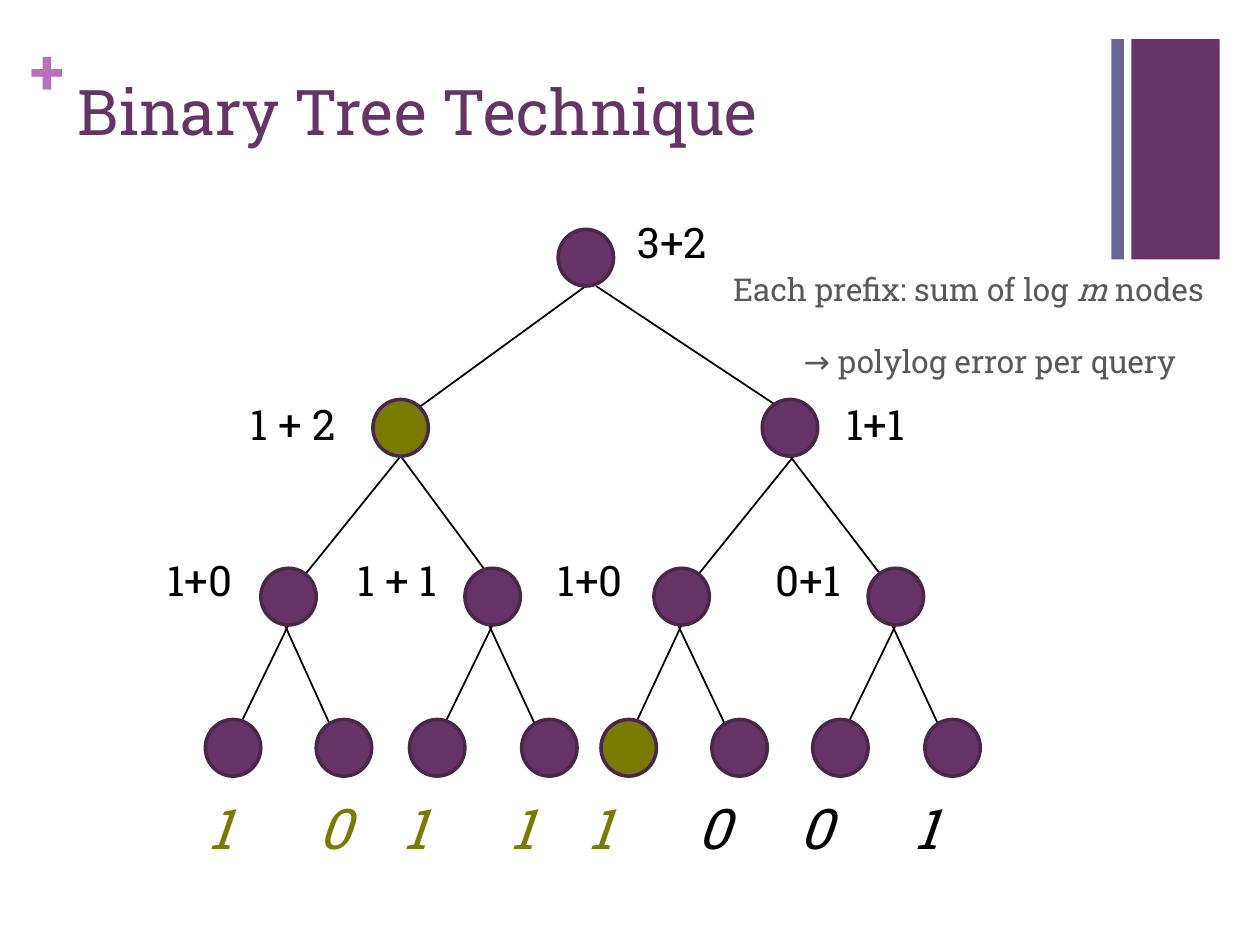
from dataclasses import dataclass

from lxml.etree import SubElement
from pptx import Presentation
from pptx.dml.color import RGBColor
from pptx.enum.shapes import MSO_CONNECTOR, MSO_SHAPE
from pptx.enum.text import MSO_ANCHOR
from pptx.oxml.ns import qn
from pptx.util import Inches, Pt

FONT = "Roboto Slab"
PURPLE, DARK_PURPLE, LILAC = "663366", "4B264B", "B870B8"
BLUE, OLIVE, BLACK, GRAY = "666699", "7A7901", "000000", "595959"

NODE_WIDTH, NODE_HEIGHT = 0.44, 0.45
LEVEL_TOPS = (1.82, 3.17, 4.51, 5.71)
LEFT_END, RIGHT_END = (0.15, 0.30), (0.19, 0.22)


@dataclass
class Node:
    """A tree node; the edge from its parent ends at an offset inside it."""
    left: float
    level: int
    edge_end: tuple = LEFT_END
    start_shift: float = 0
    fill: str = PURPLE

    @property
    def top(self) -> float:
        return LEVEL_TOPS[self.level]


@dataclass
class Label:
    text: str
    left: float
    top: float
    width: float = 0.79


@dataclass
class Digit:
    text: str
    left: float
    color: str = OLIVE


# Heap order: the parent of node i is node (i - 1) // 2
NODES = [
    Node(4.43, 0),
    Node(2.96, 1, (0.37, 0.06), fill=OLIVE),
    Node(6.05, 1, (0.13, 0.06), 0.08),
    Node(2.07, 2),
    Node(3.69, 2, (0.37, 0.30)),
    Node(5.19, 2, start_shift=0.03),
    Node(6.89, 2, (0.29, 0.30)),
    Node(1.63, 3),
    Node(2.51, 3, RIGHT_END, -0.03),
    Node(3.25, 3),
    Node(4.14, 3, RIGHT_END, -0.03),
    Node(4.77, 3, fill=OLIVE),
    Node(5.65, 3, RIGHT_END, -0.03),
    Node(6.45, 3),
    Node(7.34, 3, RIGHT_END, -0.03),
]

LABELS = [
    Label("3+2", 4.96, 1.67),
    Label("1 + 2", 1.89, 3.11, 0.96),
    Label("1+1", 6.62, 3.11),
    Label("1+0", 1.23, 4.35),
    Label("1 + 1", 2.74, 4.35, 0.96),
    Label("1+0", 4.33, 4.35),
    Label("0+1", 6.06, 4.35),
]

# Horizontal places are measured from the start of the line of digits
DIGITS = [
    Digit("1", 0), Digit("0", 0.87), Digit("1", 1.54), Digit("1", 2.39),
    Digit("1", 3.01), Digit("0", 3.88, BLACK), Digit("0", 4.69, BLACK),
    Digit("1", 5.60, BLACK),
]


def color_of(value: str) -> RGBColor:
    return RGBColor.from_string(value)


def format_span(span, size: float, color: str, bold=False, italic=False) -> None:
    font = span.font
    font.name, font.size = FONT, Pt(size)
    font.bold, font.italic = bold, italic
    font.color.rgb = color_of(color)


def add_box(page, left: float, top: float, width: float, height: float, wrap=True):
    box = page.shapes.add_textbox(
        Inches(left), Inches(top), Inches(width), Inches(height))
    box.text_frame.word_wrap = wrap
    box.text_frame.vertical_anchor = MSO_ANCHOR.TOP
    return box


def add_text(page, text: str, place: tuple, size: float, color: str,
             bold=False, wrap=True):
    box = add_box(page, *place, wrap=wrap)
    box.text_frame.text = text
    format_span(box.text_frame.paragraphs[0].runs[0], size, color, bold)
    return box


def add_filled(page, kind, place: tuple, fill: str):
    shape = page.shapes.add_shape(kind, *(Inches(value) for value in place))
    shape.shadow.inherit = False
    shape.fill.solid()
    shape.fill.fore_color.rgb = color_of(fill)
    shape.line.fill.background()
    return shape


def add_node(page, node: Node) -> None:
    place = (node.left, node.top, NODE_WIDTH, NODE_HEIGHT)
    circle = add_filled(page, MSO_SHAPE.OVAL, place, node.fill)
    circle.line.color.rgb = color_of(DARK_PURPLE)
    circle.line.width = Pt(2)


def add_edge(page, parent: Node, child: Node) -> None:
    right, down = child.edge_end
    edge = page.shapes.add_connector(
        MSO_CONNECTOR.STRAIGHT,
        Inches(parent.left + NODE_WIDTH / 2 + child.start_shift),
        Inches(parent.top + NODE_HEIGHT),
        Inches(child.left + right), Inches(child.top + down))
    edge.line.color.rgb = color_of(BLACK)
    edge.line.width = Pt(1)
    SubElement(edge._element.spPr, qn("a:effectLst"))


def add_digits(page) -> None:
    box = add_box(page, 1.56, 6.25, 6.35, 0.64)
    para = box.text_frame.paragraphs[0]
    stops = SubElement(para._p.get_or_add_pPr(), qn("a:tabLst"))
    for index, digit in enumerate(DIGITS):
        if index:
            SubElement(stops, qn("a:tab"), pos=str(Inches(digit.left)), algn="l")
        span = para.add_run()
        span.text = f"\t{digit.text}" if index else digit.text
        format_span(span, 32, digit.color, italic=True)


def add_remark(page) -> None:
    frame = add_box(page, 5.72, 2.09, 3.96, 1.01).text_frame
    for text in ("Each prefix: sum of log ", "m", " nodes"):
        span = frame.paragraphs[0].add_run()
        span.text = text
        format_span(span, 18, GRAY, italic=text == "m")
    para = frame.add_paragraph()
    para.text = "→ polylog error per query"
    para.space_before = Pt(20)
    para._p.get_or_add_pPr().set("marL", str(Inches(0.56)))
    format_span(para.runs[0], 18, GRAY)


def main() -> None:
    deck = Presentation()
    deck.slide_width, deck.slide_height = Inches(10), Inches(7.5)
    page = deck.slides.add_slide(deck.slide_layouts[6])

    # Corner decoration and title
    add_filled(page, MSO_SHAPE.RECTANGLE, (8.98, 0.31, 0.7, 1.75), PURPLE)
    plus = add_text(page, "+", (0.24, 0.25, 0.29, 0.61), 36, LILAC, bold=True)
    frame = plus.text_frame
    frame.margin_left = frame.margin_right = 0
    frame.margin_top = frame.margin_bottom = 0
    add_filled(page, MSO_SHAPE.RECTANGLE, (8.82, 0.31, 0.1, 1.75), BLUE)
    add_text(page, "Binary Tree Technique", (0.52, 0.53, 8.26, 1.22), 36, PURPLE)

    # Tree: edges lie behind the nodes
    for index, child in enumerate(NODES[1:], start=1):
        add_edge(page, NODES[(index - 1) // 2], child)
    for node in NODES:
        add_node(page, node)

    # Leaf values, node sums and remark
    add_digits(page)
    for label in LABELS:
        place = (label.left, label.top, label.width, 0.5)
        add_text(page, label.text, place, 24, BLACK, wrap=False)
    add_remark(page)

    deck.save("out.pptx")


if __name__ == "__main__":
    main()
